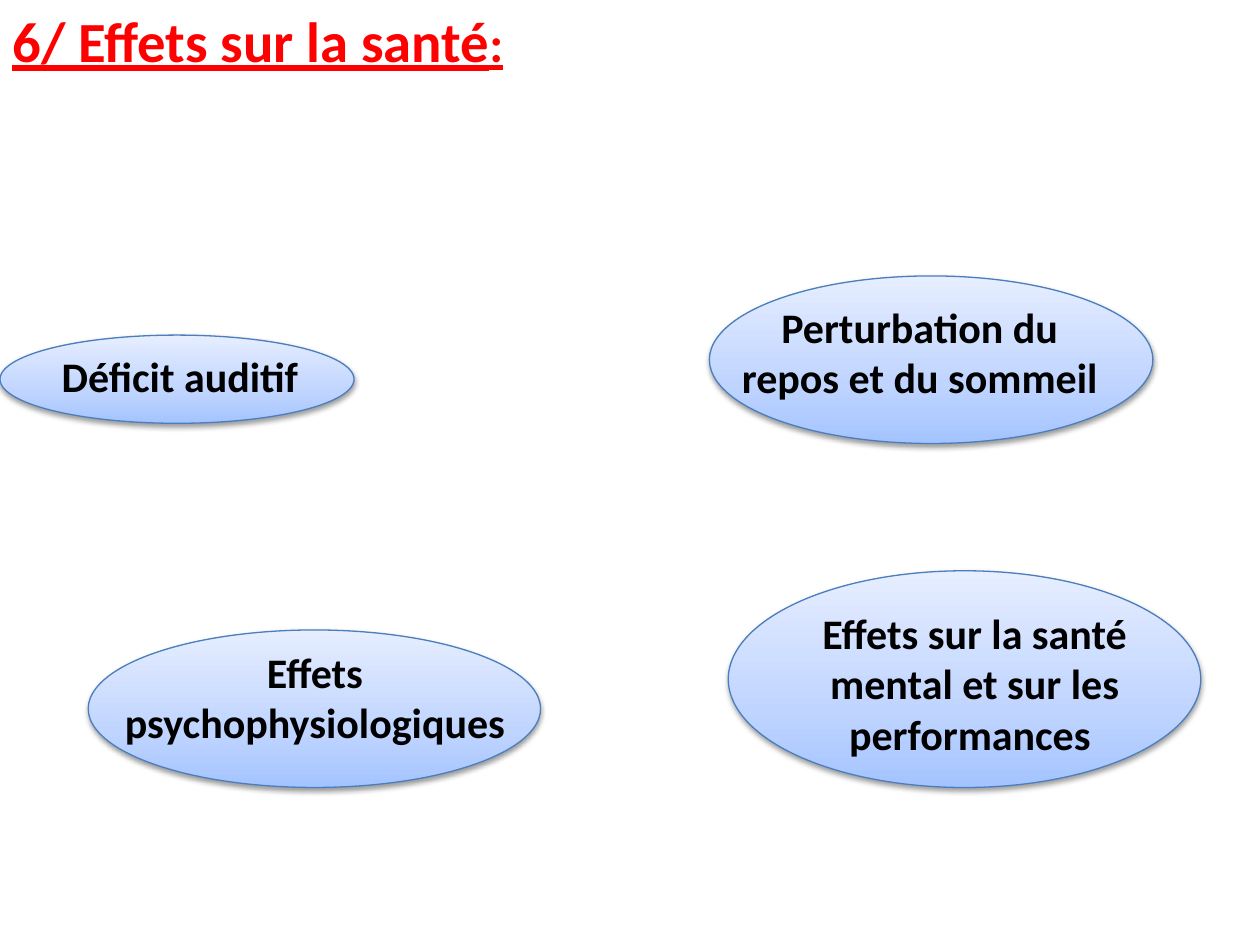
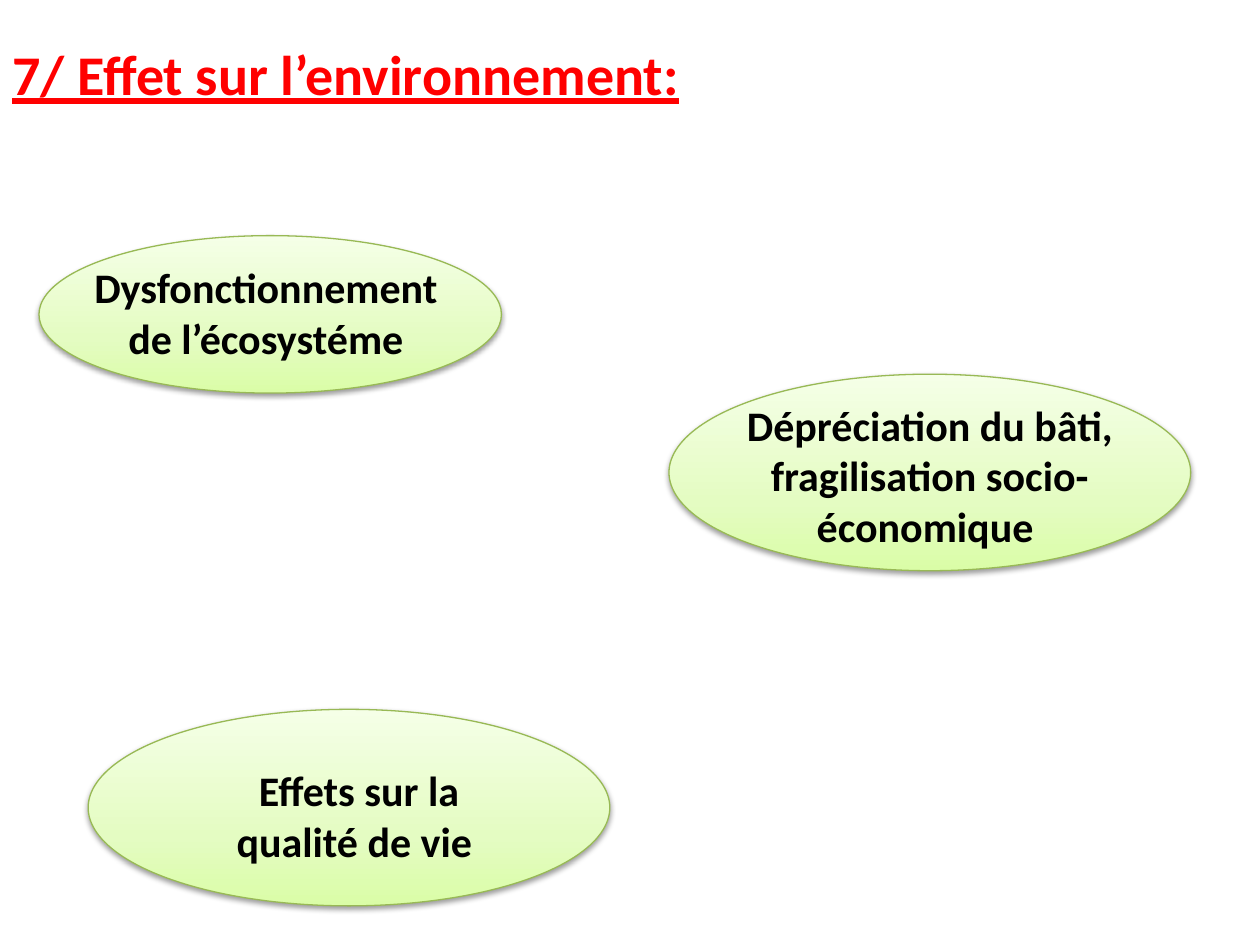
from copy import deepcopy
from pptx import Presentation
from pptx.dml.color import RGBColor
from pptx.enum.shapes import MSO_SHAPE
from pptx.enum.text import MSO_ANCHOR, PP_ALIGN
from pptx.oxml import parse_xml
from pptx.oxml.ns import nsdecls, qn
from pptx.util import Emu, Pt

PX = 9144  # 100 px to the inch
FONT = "Calibri"
RED, BLACK = "FF0000", "000000"
STOPS = (0, 0.35, 1)
BLUE = {"fill": ("A4C4FF", "BFD4FF", "E6EEFF"), "line": "4B7EBC"}
GREEN = {"fill": ("DAFDA7", "E4FCC2", "F5FFE7"), "line": "98B955"}
SHADOW = f"""<a:outerShdw {nsdecls('a')} blurRad="40000" dist="20000"
  dir="5400000" rotWithShape="0"><a:srgbClr val="{BLACK}">
  <a:alpha val="38000"/></a:srgbClr></a:outerShdw>"""

# Each effect: wording, ellipse box, label box relative to the ellipse
HEALTH = [
    ("Déficit auditif", (0, 266, 281, 70), (39, 7, 242, 50)),
    ("Perturbation du repos et du sommeil", (563, 219, 352, 133), (7, 15, 320, 91)),
    ("Effets psychophysiologiques", (70, 500, 359, 125), (16, 8, 328, 91)),
    ("Effets sur la santé mental et sur les performances ",
     (578, 453, 375, 172), (16, 24, 359, 131)),
]
NATURE = [
    ("Dysfonctionnement de l’écosystéme", (31, 187, 367, 125), (16, 16, 328, 91)),
    ("Dépréciation du bâti, fragilisation socio-économique ",
     (531, 297, 414, 156), (-8, 15, 430, 131)),
    ("Effets sur la qualité de vie ", (70, 563, 414, 156), (86, 39, 258, 91)),
]


def color(code):
    return RGBColor.from_string(code)


def place(box):
    return [Emu(n * PX) for n in box]


def style(run, size, code):
    font = run.font
    font.name, font.size, font.bold = FONT, Pt(size), True
    font.color.rgb = color(code)


def add_text(slide, box, anchor=MSO_ANCHOR.TOP):
    frame = slide.shapes.add_textbox(*place(box)).text_frame
    frame.word_wrap = True
    frame.vertical_anchor = anchor
    return frame


def add_title(slide, box, parts):
    """Write the underlined heading from (wording, size) parts."""
    line = add_text(slide, box, MSO_ANCHOR.MIDDLE).paragraphs[0]
    for words, size in parts:
        run = line.add_run()
        run.text = words
        style(run, size, RED)
        run.font.underline = True


def add_oval(slide, box, theme):
    oval = slide.shapes.add_shape(MSO_SHAPE.OVAL, *place(box))
    oval.fill.gradient()
    oval.fill.gradient_angle = 90
    props = oval._element.spPr
    stops = props.find(".//" + qn("a:gsLst"))
    stops.insert(1, deepcopy(stops[0]))
    for stop, spot, code in zip(oval.fill.gradient_stops, STOPS, theme["fill"]):
        stop.position = spot
        stop.color.rgb = color(code)
    oval.line.color.rgb = color(theme["line"])
    oval.line.width = Pt(0.75)
    oval.shadow.inherit = False
    props.find(qn("a:effectLst")).append(parse_xml(SHADOW))


def add_effect(slide, words, box, label, theme, align):
    add_oval(slide, box, theme)
    left, top, wide, high = label
    frame = add_text(slide, (box[0] + left, box[1] + top, wide, high))
    frame.text = words
    line = frame.paragraphs[0]
    line.alignment = align
    style(line.runs[0], 24, BLACK)


def add_slide(deck, box, title, effects, theme):
    slide = deck.slides.add_slide(deck.slide_layouts[6])
    add_title(slide, box, title)
    for words, oval, label in effects:
        short = words == "Déficit auditif"
        align = PP_ALIGN.LEFT if short else PP_ALIGN.CENTER
        add_effect(slide, words, oval, label, theme, align)


def main():
    deck = Presentation()
    deck.slide_width, deck.slide_height = place((1000, 750))
    add_slide(deck, (0, 0, 850, 63),
              [("6/ Effets sur la santé", 32.4), (":", 28.8)], HEALTH, BLUE)
    add_slide(deck, (0, 23, 850, 70),
              [("7/ Effet sur l’environnement:", 32)], NATURE, GREEN)
    deck.save("out.pptx")


if __name__ == "__main__":
    main()
